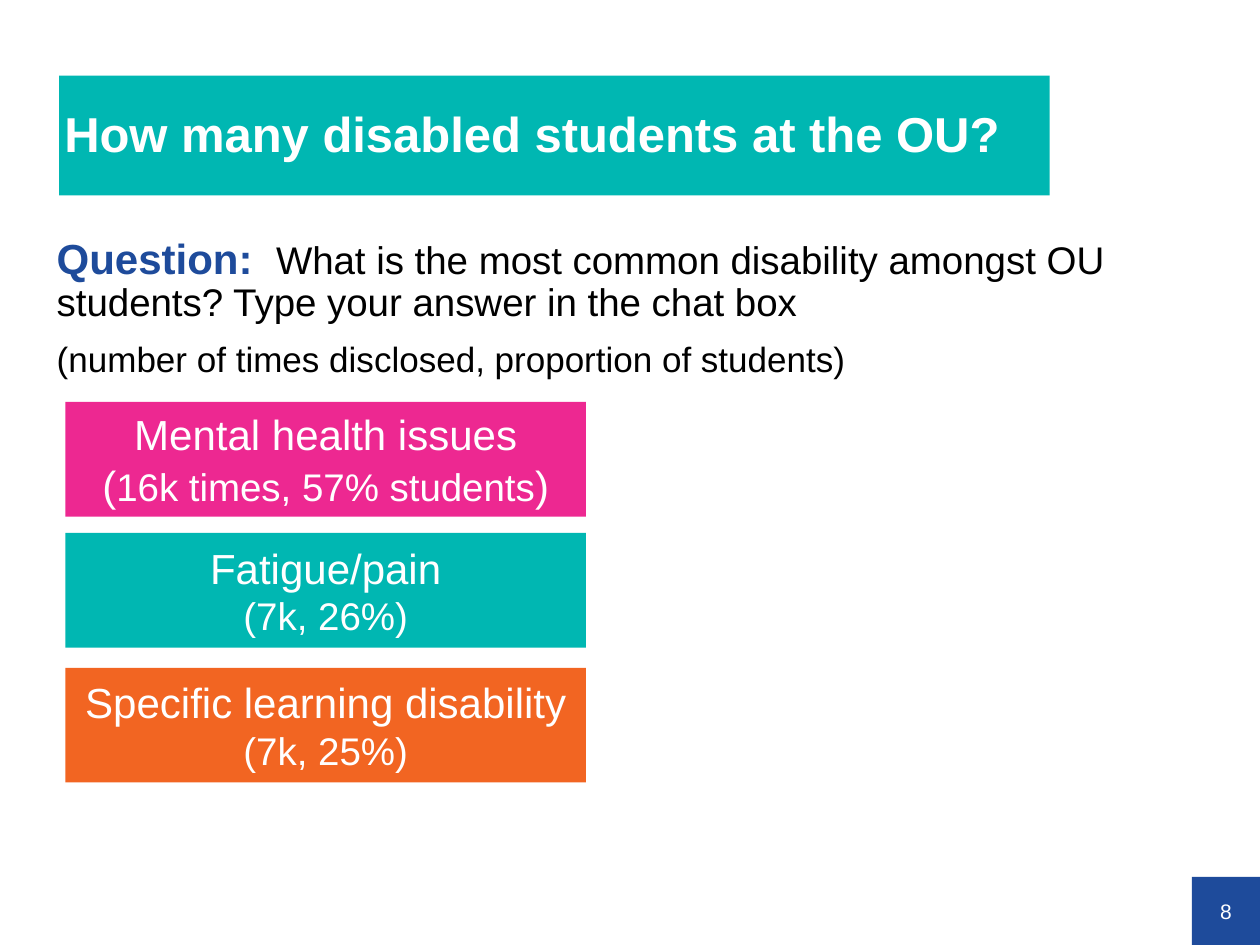
from pptx import Presentation
from pptx.dml.color import RGBColor
from pptx.enum.shapes import MSO_SHAPE
from pptx.enum.text import MSO_ANCHOR, MSO_AUTO_SIZE, PP_ALIGN
from pptx.oxml.xmlchemy import OxmlElement
from pptx.util import Inches, Pt

BLUE, TEAL, PINK, ORANGE = "1E4B9B", "00B7B2", "ED2891", "F26522"
WHITE, BLACK = "FFFFFF", "000000"


def add_run(p, text, size=22, color=WHITE, bold=False):
    r = p.add_run()
    r.text = text
    r.font.name = "Arial"
    r.font.size = Pt(size)
    r.font.bold = bold
    r.font.color.rgb = RGBColor.from_string(color)


def format_box(sp, box, fill=None, insets=(0.1, 0.05, 0.1, 0.05),
               anchor=MSO_ANCHOR.MIDDLE):
    sp.left, sp.top, sp.width, sp.height = [Inches(v) for v in box]
    if fill:
        sp.fill.solid()
        sp.fill.fore_color.rgb = RGBColor.from_string(fill)
        sp.line.fill.background()
        sp.shadow.inherit = False
    tf = sp.text_frame
    tf.word_wrap = True
    tf.auto_size = MSO_AUTO_SIZE.NONE
    tf.vertical_anchor = anchor
    (tf.margin_left, tf.margin_top,
     tf.margin_right, tf.margin_bottom) = [Inches(v) for v in insets]
    return tf


prs = Presentation()
prs.slide_width, prs.slide_height = Inches(10), Inches(7.5)
s = prs.slides.add_slide(prs.slide_layouts[1])

# Page number
sp = s.shapes.add_shape(MSO_SHAPE.RECTANGLE, 0, 0, 0, 0)
tf = format_box(sp, (9.46, 6.96, 0.54, 0.54), BLUE, (0, 0, 0, 0))
p = tf.paragraphs[0]
p.alignment = PP_ALIGN.CENTER
add_run(p, "8", size=12)

# Title
tf = format_box(s.shapes.title, (0.47, 0.6, 7.86, 0.95), TEAL, (0.04, 0.02, 0, 0))
p = tf.paragraphs[0]
p.alignment = PP_ALIGN.LEFT
p.line_spacing = 0.9
add_run(p, "How many disabled students at the OU?", size=28, bold=True)

# Question
tf = format_box(s.placeholders[1], (0.35, 1.84, 9.13, 5.06), anchor=MSO_ANCHOR.TOP)
question, note = tf.paragraphs[0], tf.add_paragraph()
for p, before in ((question, 0), (note, 10)):
    pPr = p._p.get_or_add_pPr()
    pPr.set("marL", "0")
    pPr.set("indent", "0")
    pPr.append(OxmlElement("a:buNone"))
    p.alignment = PP_ALIGN.LEFT
    p.line_spacing = 0.9
    p.space_before = Pt(before)
add_run(question, "Question:  ", size=24, color=BLUE, bold=True)
add_run(question, "What is the most common disability amongst OU students? "
        "Type your answer in the chat box", color=BLACK)
add_run(note, "(number of times disclosed, proportion of students)",
        size=20, color=BLACK)

# Answers: top, fill, name, and the runs of the figures line
answers = [
    (3.19, PINK, "Mental health issues",
     [("(", 24), ("16k times, 57% students", 22), (")", 24)]),
    (4.23, TEAL, "Fatigue/pain", [("(7k, 26%)", 22)]),
    (5.3, ORANGE, "Specific learning disability", [("(7k, 25%)", 22)]),
]
for top, fill, name, figures in answers:
    sp = s.shapes.add_shape(MSO_SHAPE.RECTANGLE, 0, 0, 0, 0)
    tf = format_box(sp, (0.52, top, 4.13, 0.91), fill, (0.05,) * 4)
    for p, runs in ((tf.paragraphs[0], [(name, 24)]), (tf.add_paragraph(), figures)):
        p.alignment = PP_ALIGN.CENTER
        for text, size in runs:
            add_run(p, text, size=size)

prs.save("out.pptx")
